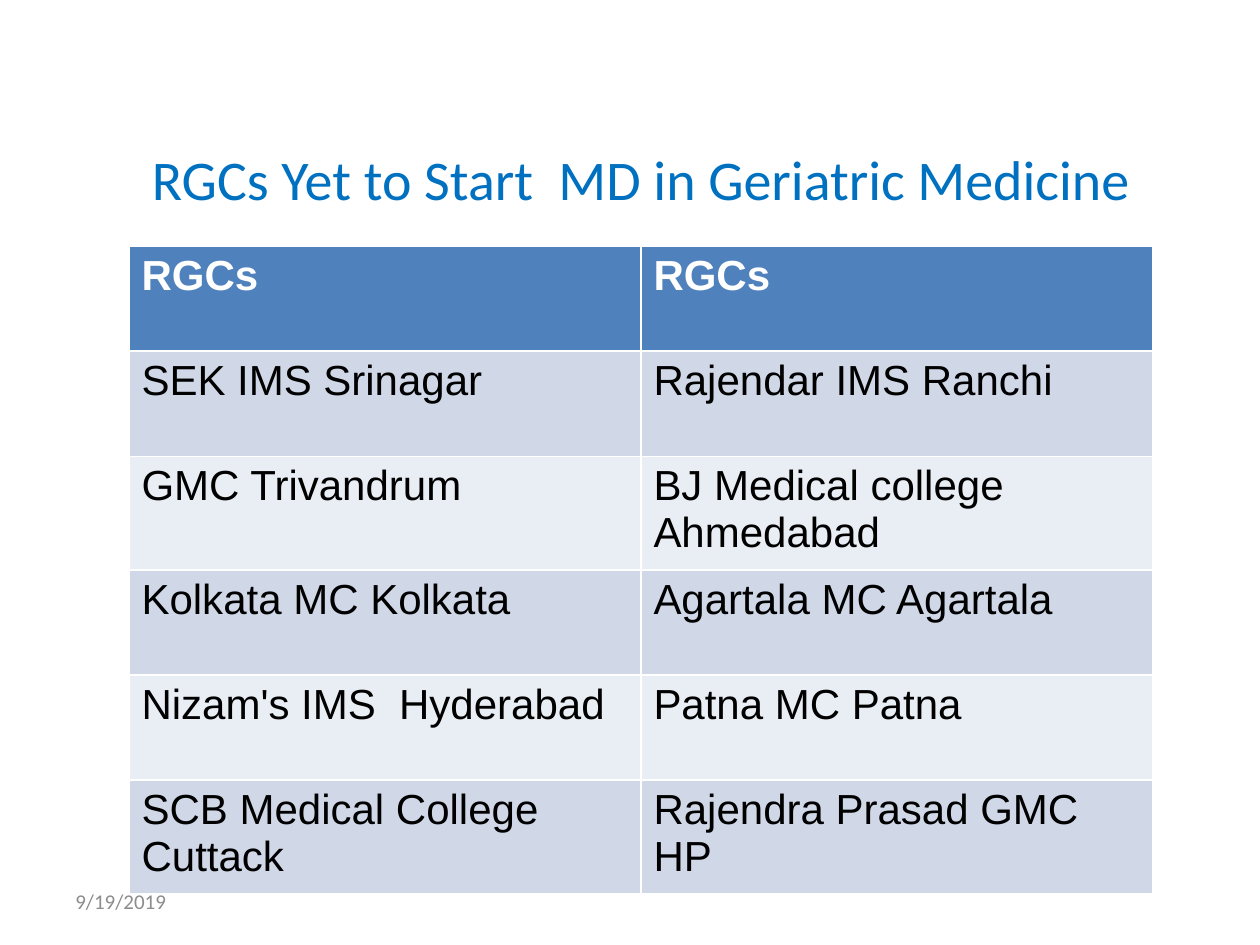
import pptx
import pptx.dml.color
import pptx.enum.text
import pptx.util
from pptx.util import Cm

TITLE = "RGCs Yet to Start  MD in Geriatric Medicine "
DATE = "9/19/2019"
CENTRES = [
    ("RGCs", "RGCs"),
    ("SEK IMS Srinagar", "Rajendar IMS Ranchi"),
    ("GMC Trivandrum", "BJ Medical college Ahmedabad"),
    ("Kolkata MC Kolkata", "Agartala MC Agartala"),
    ("Nizam's IMS  Hyderabad", "Patna MC Patna"),
    ("SCB Medical College Cuttack", "Rajendra Prasad GMC HP"),
]
COLOURS = {
    "title": "0070C0",
    "date": "8C8C8C",
    "header": "4F81BD",
    "header_text": "FFFFFF",
    "odd_row": "D0D8E8",
    "even_row": "E9EDF4",
    "body_text": "000000",
}
COLUMN_WIDTH = Cm(10.32)
ROW_HEIGHT = Cm(2.12)


def colour(name):
    return pptx.dml.color.RGBColor.from_string(COLOURS[name])


def format_text(text_frame, font_name, size, colour_name, bold=False):
    for paragraph in text_frame.paragraphs:
        for run in paragraph.runs:
            run.font.name = font_name
            run.font.size = pptx.util.Pt(size)
            run.font.bold = bold
            run.font.color.rgb = colour(colour_name)


def add_label(slide, text, position, size, colour_name, alignment):
    text_frame = slide.shapes.add_textbox(*position).text_frame
    text_frame.word_wrap = True
    text_frame.vertical_anchor = pptx.enum.text.MSO_ANCHOR.MIDDLE
    text_frame.text = text
    text_frame.paragraphs[0].alignment = alignment
    format_text(text_frame, "Calibri", size, colour_name)


def add_centre_table(slide):
    row_count, column_count = len(CENTRES), len(CENTRES[0])
    table = slide.shapes.add_table(
        row_count, column_count, Cm(2.6), Cm(4.96),
        COLUMN_WIDTH * column_count, ROW_HEIGHT * row_count,
    ).table
    for column in table.columns:
        column.width = COLUMN_WIDTH
    for row_index, names in enumerate(CENTRES):
        table.rows[row_index].height = ROW_HEIGHT
        is_header = row_index == 0
        band = "header" if is_header else "odd_row" if row_index % 2 else "even_row"
        text_colour = "header_text" if is_header else "body_text"
        for column_index, name in enumerate(names):
            cell = table.cell(row_index, column_index)
            cell.fill.solid()
            cell.fill.fore_color.rgb = colour(band)
            cell.text_frame.text = name
            format_text(cell.text_frame, "Arial", 24, text_colour, is_header)


def main():
    presentation = pptx.Presentation()
    presentation.slide_width = Cm(25.4)
    presentation.slide_height = Cm(19.05)
    slide = presentation.slides.add_slide(presentation.slide_layouts[6])
    alignments = pptx.enum.text.PP_ALIGN
    title_position = (Cm(1.98), Cm(2.39), Cm(22.15), Cm(2.39))
    date_position = (Cm(1.27), Cm(17.65), Cm(5.92), Cm(1.02))
    add_label(slide, TITLE, title_position, 32, "title", alignments.CENTER)
    add_label(slide, DATE, date_position, 12, "date", alignments.LEFT)
    add_centre_table(slide)
    presentation.save("out.pptx")


if __name__ == "__main__":
    main()
